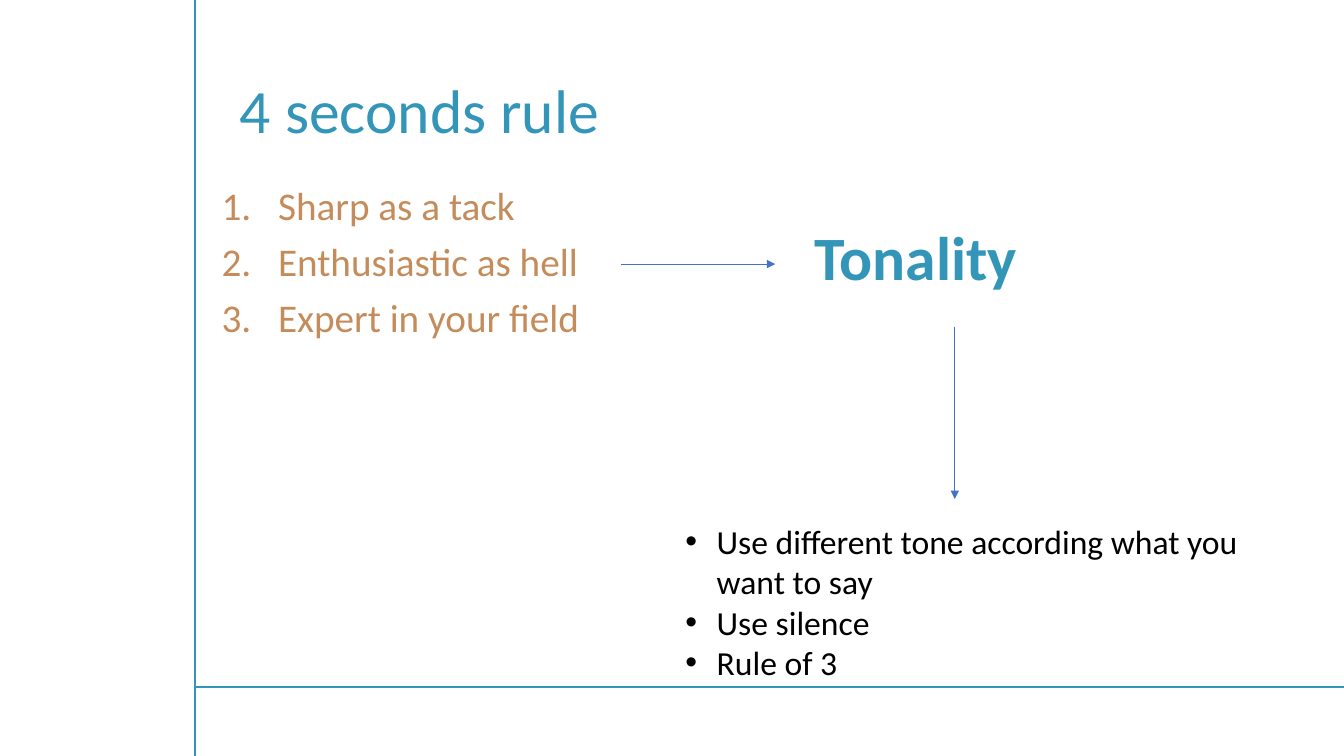
"""Build the "4 seconds rule" slide."""
from lxml.etree import SubElement
from pptx import Presentation
from pptx.dml.color import RGBColor
from pptx.enum.shapes import MSO_CONNECTOR
from pptx.enum.text import MSO_ANCHOR, PP_ALIGN
from pptx.oxml.ns import qn
from pptx.util import Inches, Pt

TEAL = RGBColor(0x33, 0x95, 0xB7)
TAN = RGBColor(0xC5, 0x8C, 0x5B)
BLUE = RGBColor(0x44, 0x72, 0xC4)
BLACK = RGBColor(0, 0, 0)
FONT = "Calibri"
WIDTH, HEIGHT = 13.33, 7.5
FRAME_X, FRAME_Y = 1.93, 6.82

TITLE = "4 seconds rule"
QUALITIES = ["Sharp as a tack", "Enthusiastic as hell", "Expert in your field"]
TOPIC = "Tonality"
TIPS = ["Use different tone according what you want to say", "Use silence", "Rule of 3"]

FRAME_LINES = [(FRAME_X, 0, FRAME_X, HEIGHT), (WIDTH, FRAME_Y, FRAME_X, FRAME_Y)]
ARROWS = [(6.16, 2.62, 7.69, 2.62), (9.47, 3.24, 9.47, 4.95)]


def add_line(slide, ends, color, width, arrow=False):
    """Draw a straight line, with an arrowhead at its end if asked."""
    line = slide.shapes.add_connector(MSO_CONNECTOR.STRAIGHT, *map(Inches, ends))
    line.line.color.rgb = color
    line.line.width = Pt(width)
    if arrow:
        SubElement(line.line._get_or_add_ln(), qn("a:tailEnd"), type="triangle")
    SubElement(line._element.spPr, qn("a:effectLst"))


def place(shape, left, top, width, height):
    """Set the position and size of a shape in inches."""
    shape.left, shape.top = Inches(left), Inches(top)
    shape.width, shape.height = Inches(width), Inches(height)


def write(shape, lines, size, color, bold=False, wrap=True):
    """Fill a shape with one paragraph per line and format the runs."""
    frame = shape.text_frame
    frame.word_wrap = wrap
    frame.text = "\n".join(lines)
    for paragraph in frame.paragraphs:
        for run in paragraph.runs:
            run.font.name = FONT
            run.font.size = Pt(size)
            run.font.bold = bold
            run.font.color.rgb = color
    return frame.paragraphs


def add_text(slide, box, lines, size, color, bold=False, wrap=True):
    """Add a text box and return its paragraphs."""
    shape = slide.shapes.add_textbox(*map(Inches, box))
    return write(shape, lines, size, color, bold, wrap)


def add_bullets(paragraphs, indent, tag, **attributes):
    """Give each paragraph a hanging indent and a list marker."""
    for paragraph in paragraphs:
        properties = paragraph._p.get_or_add_pPr()
        properties.set("marL", str(Inches(indent)))
        properties.set("indent", str(-Inches(indent)))
        SubElement(properties, qn("a:buFont"), typeface="Arial")
        SubElement(properties, qn(tag), **attributes)


def main():
    """Create the presentation and save it."""
    presentation = Presentation()
    presentation.slide_width, presentation.slide_height = Inches(WIDTH), Inches(HEIGHT)
    slide = presentation.slides.add_slide(presentation.slide_layouts[5])

    for ends in FRAME_LINES:
        add_line(slide, ends, TEAL, 1.5)
    for ends in ARROWS:
        add_line(slide, ends, BLUE, 0.5, arrow=True)

    title = slide.shapes.title
    place(title, 2.28, 0.4, 10.13, 1.45)
    heading = write(title, [TITLE], 44, TEAL)[0]
    heading.alignment = PP_ALIGN.LEFT
    heading.line_spacing = 0.9
    title.text_frame.vertical_anchor = MSO_ANCHOR.MIDDLE

    qualities = add_text(slide, (2.1, 1.8, 4.06, 1.95), QUALITIES, 28, TAN)
    for index, paragraph in enumerate(qualities):
        paragraph.line_spacing = 0.9
        paragraph.space_before = Pt(10 if index else 0)
    add_bullets(qualities, 0.56, "a:buAutoNum", type="arabicPeriod")

    topic = add_text(slide, (7.95, 2.12, 2.27, 0.84), [TOPIC], 44, TEAL, bold=True, wrap=False)
    topic[0].alignment = PP_ALIGN.CENTER

    tips = add_text(slide, (6.7, 5.12, 5.89, 1.72), TIPS, 24, BLACK)
    add_bullets(tips, 0.31, "a:buChar", char="•")

    presentation.save("out.pptx")


if __name__ == "__main__":
    main()
